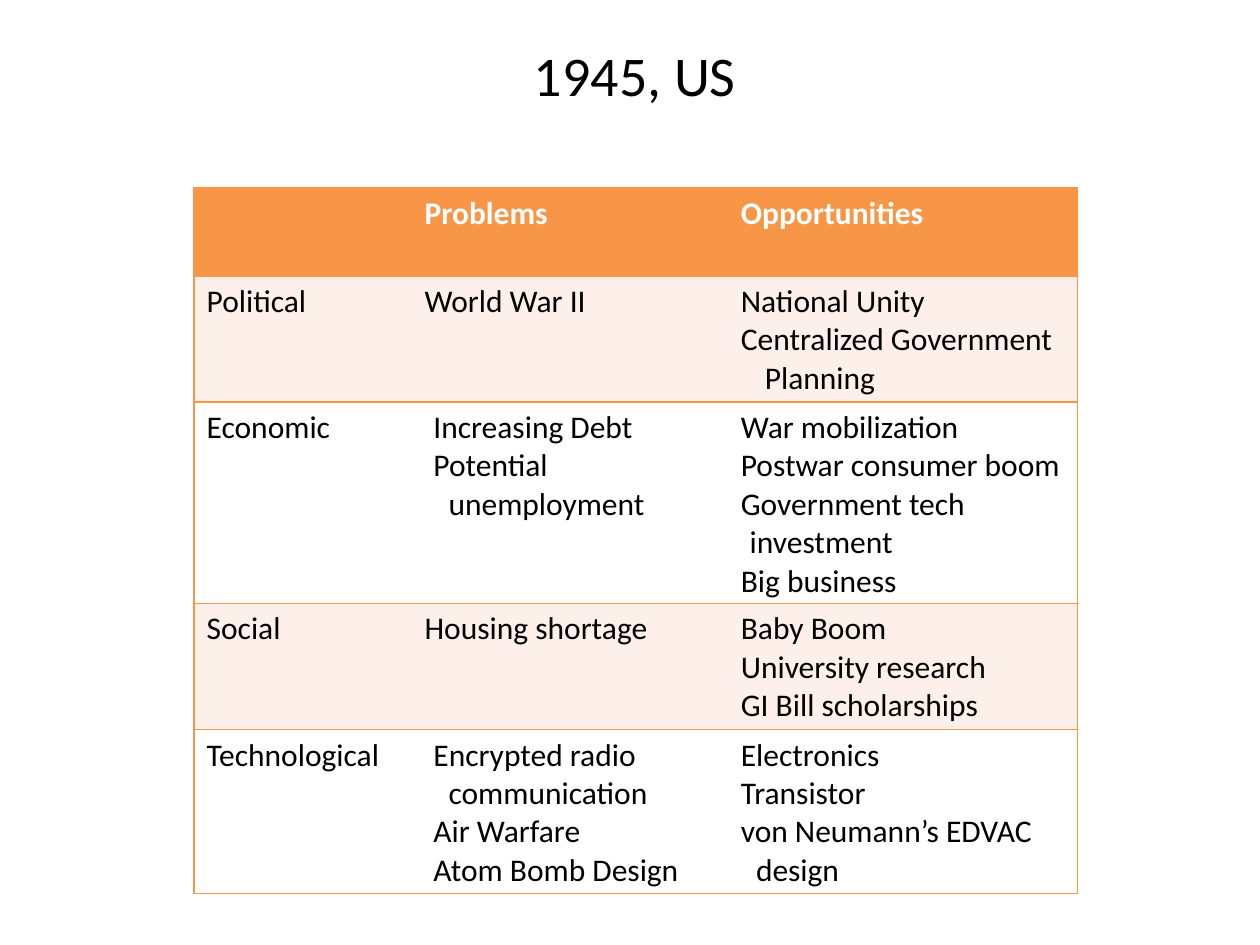
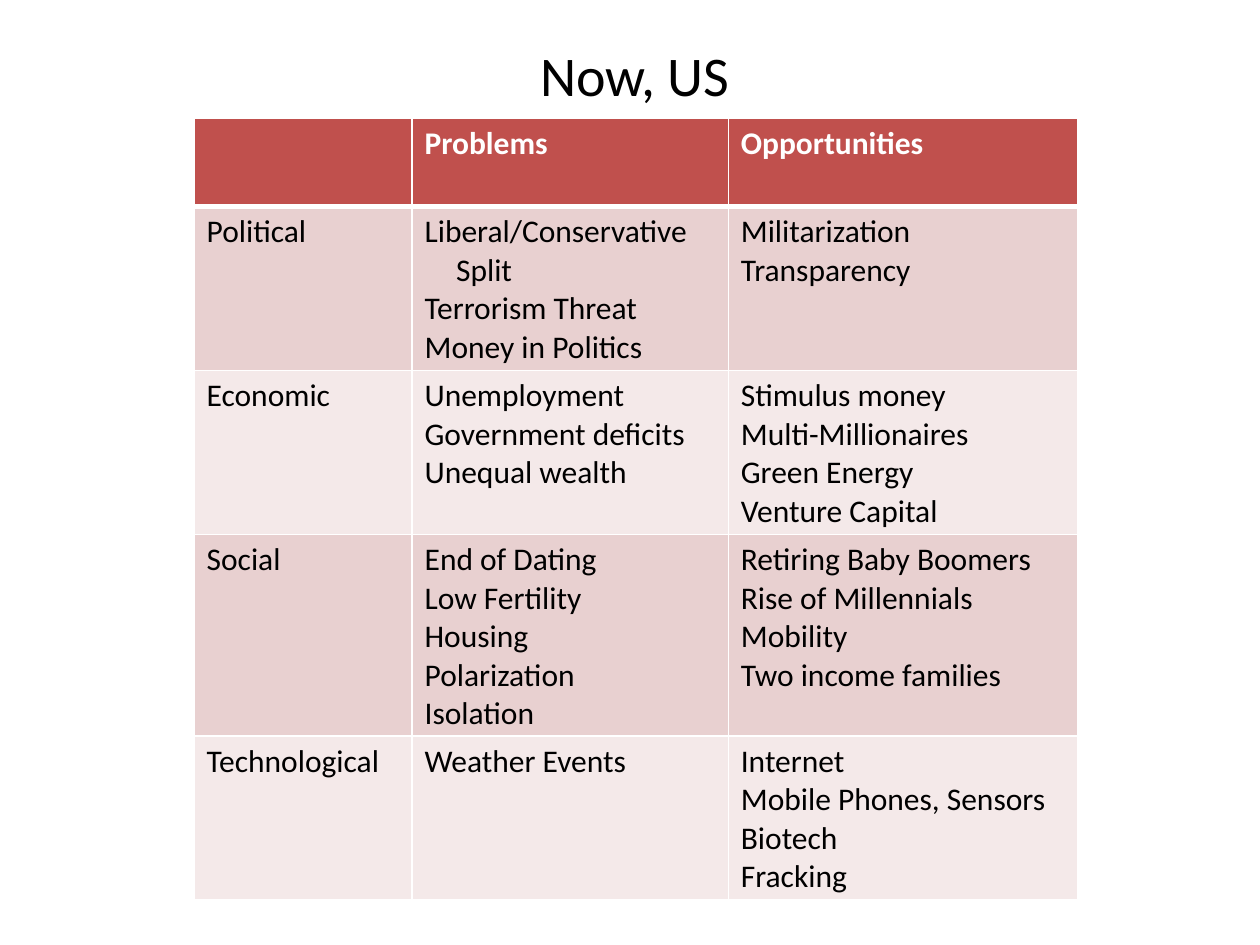
from dataclasses import dataclass

import pptx
import pptx.dml.color
import pptx.enum.text
import pptx.oxml
import pptx.oxml.ns
import pptx.util
from pptx.util import Inches


@dataclass(frozen=True)
class Theme:
    font: str = "Calibri"
    text: str = "000000"
    white: str = "FFFFFF"
    title_size: int = 32
    body_size: int = 18
    orange: str = "F79646"
    orange_tint: str = "FDEFE9"
    red: str = "C0504D"
    red_tint: str = "E8D0D0"
    red_pale: str = "F4E9E9"


@dataclass(frozen=True)
class Points:
    lines: tuple[str, ...]
    left: float = 0
    hang: float = 0


@dataclass(frozen=True)
class TableStyle:
    header: str
    bands: tuple[str, str]
    line: str
    header_rule: float
    inner_verticals: bool


@dataclass(frozen=True)
class Era:
    title: str
    top: float
    height: float
    style: TableStyle
    rows: tuple[tuple[Points, Points], ...]


THEME = Theme()
HEADINGS = ("", "Problems", "Opportunities")
TOPICS = ("Political", "Economic", "Social", "Technological")
COLUMN_WIDTHS = (1.73, 2.51, 2.77)
ROW_HEIGHT = 0.7
TABLE_LEFT = 1.54

ORANGE_STYLE = TableStyle(THEME.orange, (THEME.orange_tint, THEME.white), THEME.orange, 1, False)
RED_STYLE = TableStyle(THEME.red, (THEME.red_tint, THEME.red_pale), THEME.white, 3, True)

ERAS = (
    Era("1945, US", 1.49, 5.6, ORANGE_STYLE, (
        (Points(("World War II",)),
         Points(("National Unity", "Centralized Government Planning"), 0.19, 0.19)),
        (Points(("Increasing Debt", "Potential unemployment"), 0.19, 0.12),
         Points(("War mobilization", "Postwar consumer boom",
                 "Government tech investment", "Big business"), 0.07, 0.07)),
        (Points(("Housing shortage",), 0.19, 0.19),
         Points(("Baby Boom", "University research", "GI Bill scholarships"))),
        (Points(("Encrypted radio communication", "Air Warfare", "Atom Bomb Design"), 0.19, 0.12),
         Points(("Electronics", "Transistor", "von Neumann’s EDVAC design"), 0.12, 0.12)),
    )),
    Era("Now, US", 0.94, 6.2, RED_STYLE, (
        (Points(("Liberal/Conservative Split", "Terrorism Threat", "Money in Politics"), 0.25, 0.25),
         Points(("Militarization", "Transparency"))),
        (Points(("Unemployment", "Government deficits", "Unequal wealth")),
         Points(("Stimulus money", "Multi-Millionaires", "Green Energy", "Venture Capital"))),
        (Points(("End of Dating", "Low Fertility", "Housing", "Polarization", "Isolation"), 0.19, 0.19),
         Points(("Retiring Baby Boomers", "Rise of Millennials", "Mobility", "Two income families"))),
        (Points(("Weather Events",)),
         Points(("Internet", "Mobile Phones, Sensors", "Biotech", "Fracking"))),
    )),
)


def format_runs(p, size: int, color: str, bold: bool = False) -> None:
    for r in p.runs:
        r.font.name = THEME.font
        r.font.size = pptx.util.Pt(size)
        r.font.bold = bold
        r.font.color.rgb = pptx.dml.color.RGBColor.from_string(color)


def add_title(slide, title: str) -> None:
    tf = slide.shapes.add_textbox(Inches(3.91), Inches(0.04), Inches(2.26), Inches(1.09)).text_frame
    tf.word_wrap = True
    tf.vertical_anchor = pptx.enum.text.MSO_ANCHOR.MIDDLE
    tf.text = title
    p = tf.paragraphs[0]
    p.alignment = pptx.enum.text.PP_ALIGN.CENTER
    format_runs(p, THEME.title_size, THEME.text)


def fill_cell(cell, points: Points, fill: str, color: str, bold: bool) -> None:
    cell.fill.solid()
    cell.fill.fore_color.rgb = pptx.dml.color.RGBColor.from_string(fill)
    cell.text_frame.text = "\n".join(points.lines)
    for p in cell.text_frame.paragraphs:
        format_runs(p, THEME.body_size, color, bold)
        if points.left:
            pPr = p._p.get_or_add_pPr()
            pPr.set("marL", str(Inches(points.left)))
            pPr.set("indent", str(-Inches(points.hang)))


def set_borders(cell, color: str, widths: dict[str, float]) -> None:
    tcPr = cell._tc.get_or_add_tcPr()
    for position, side in enumerate("LRTB"):
        width = widths[side]
        paint = f'<a:solidFill><a:srgbClr val="{color}"/></a:solidFill>' if width else "<a:noFill/>"
        ln = pptx.oxml.parse_xml(
            f'<a:ln{side} {pptx.oxml.ns.nsdecls("a")} w="{pptx.util.Pt(width)}">{paint}</a:ln{side}>')
        tcPr.insert(position, ln)


def add_comparison(slide, era: Era) -> None:
    rows = [tuple(Points((heading,)) for heading in HEADINGS)]
    rows += [(Points((topic,)), *cells) for topic, cells in zip(TOPICS, era.rows)]
    frame = slide.shapes.add_table(
        len(rows), len(HEADINGS), Inches(TABLE_LEFT), Inches(era.top),
        Inches(sum(COLUMN_WIDTHS)), Inches(ROW_HEIGHT * len(rows)))
    table = frame.table
    table.first_row = table.horz_banding = False
    for column, width in zip(table.columns, COLUMN_WIDTHS):
        column.width = Inches(width)
    frame.height = Inches(era.height)

    style = era.style
    inner = 1 if style.inner_verticals else 0
    last = len(HEADINGS) - 1
    for i, row in enumerate(rows):
        is_header = i == 0
        fill = style.header if is_header else style.bands[(i - 1) % 2]
        color = THEME.white if is_header else THEME.text
        for j, points in enumerate(row):
            cell = table.cell(i, j)
            fill_cell(cell, points, fill, color, is_header)
            set_borders(cell, style.line, {
                "L": 1 if j == 0 else inner,
                "R": 1 if j == last else inner,
                "T": style.header_rule if i == 1 else 1,
                "B": style.header_rule if is_header else 1,
            })


def main() -> None:
    prs = pptx.Presentation()
    prs.slide_width, prs.slide_height = Inches(10), Inches(7.5)
    for era in ERAS:
        slide = prs.slides.add_slide(prs.slide_layouts[6])
        add_title(slide, era.title)
        add_comparison(slide, era)
    prs.save("out.pptx")


if __name__ == "__main__":
    main()
